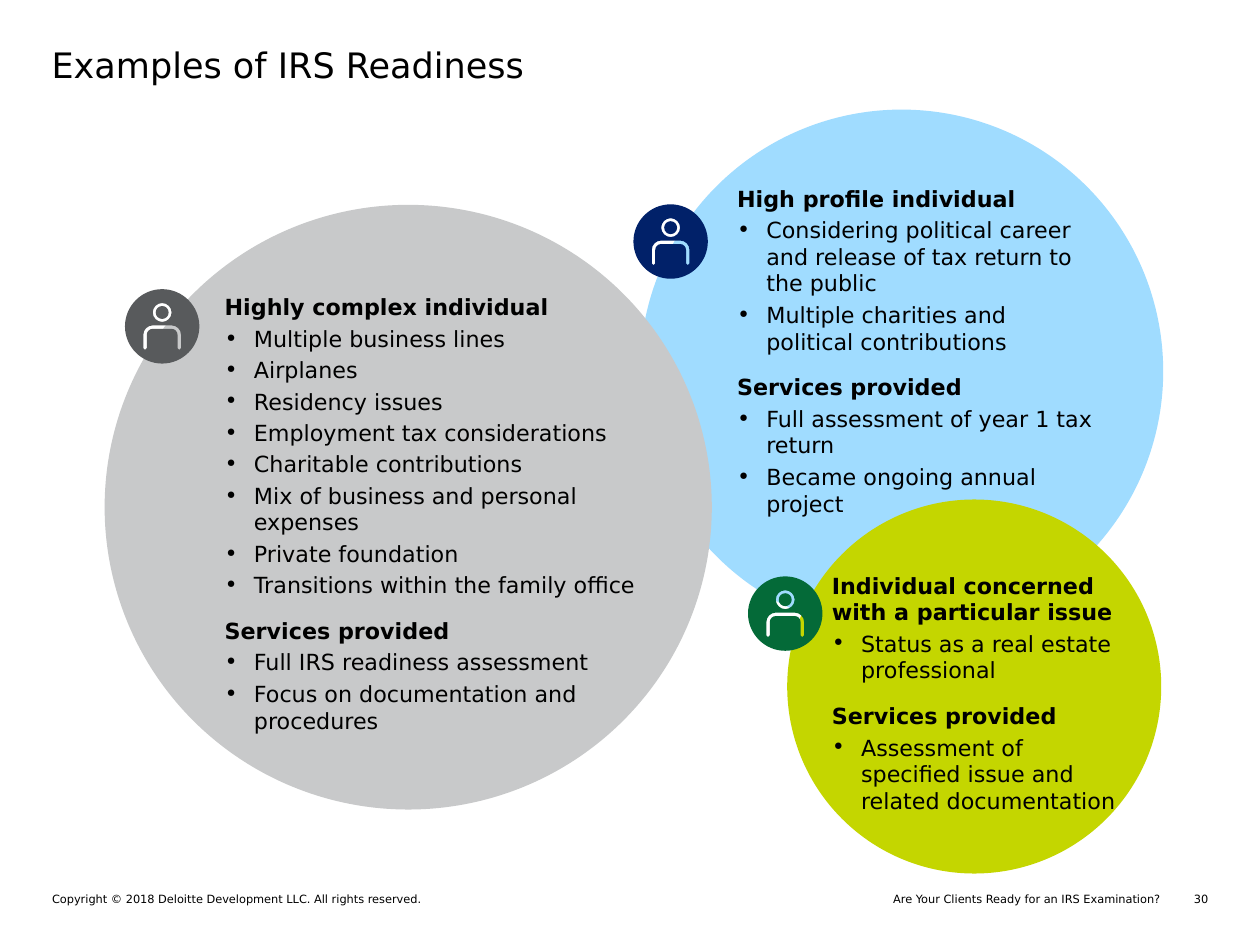
import pptx
import pptx.dml.color
import pptx.enum.shapes
import pptx.enum.text
import pptx.oxml.ns
import pptx.util
from lxml import etree
from pptx.util import Cm, Pt

FONT = "DejaVu Sans"
COLORS = {
    "text": "000000",
    "light blue": "A0DCFF",
    "navy": "012169",
    "lime": "C4D600",
    "green": "046A38",
    "light grey": "C8C9CA",
    "dark grey": "585A5C",
}
ICON_SIZE = 1.5
UNITS_PER_CM = 1000
ARC_PULL = 0.55  # how far a quarter arc's control points reach to its corner
SERVICES = "Services provided"

# Boxes are (left, top, width, height) in centimetres.
PROFILES = [
    {
        "circle": (12.9, 2.21, 10.55, 10.55), "fill": "light blue",
        "text": (14.86, 3.73, 7.29, 6.07),
        "icon": (12.77, 4.12), "icon fill": "navy",
        "sections": [
            ("High profile individual", [
                "Considering political career and release of tax return to the public",
                "Multiple charities and political contributions"]),
            (SERVICES, [
                "Full assessment of year 1 tax return",
                "Became ongoing annual project"]),
        ],
    },
    {
        "circle": (15.87, 10.07, 7.54, 7.54), "fill": "lime",
        "text": (16.77, 11.53, 5.75, 4.8),
        "icon": (15.08, 11.62), "icon fill": "green",
        "sections": [
            ("Individual concerned\nwith a particular issue", [
                "Status as a real estate professional"]),
            (SERVICES, [
                "Assessment of specified issue and related documentation"]),
        ],
    },
    {
        "circle": (2.11, 4.13, 12.24, 12.19), "fill": "light grey",
        "text": (4.53, 5.92, 8.38, 8.94),
        "icon": (2.52, 5.83), "icon fill": "dark grey",
        "sections": [
            ("Highly complex individual", [
                "Multiple business lines",
                "Airplanes",
                "Residency issues",
                "Employment tax considerations",
                "Charitable contributions",
                "Mix of business and personal expenses",
                "Private foundation",
                "Transitions within the family office"]),
            (SERVICES, [
                "Full IRS readiness assessment",
                "Focus on documentation and procedures"]),
        ],
    },
]


def color(name):
    return pptx.dml.color.RGBColor.from_string(COLORS[name])


def paint(shape, fill):
    shape.shadow.inherit = False
    shape.fill.solid()
    shape.fill.fore_color.rgb = color(fill)
    shape.line.fill.background()


def prepare_frame(frame):
    frame.margin_left = frame.margin_top = 0
    frame.margin_right = frame.margin_bottom = 0
    frame.vertical_anchor = pptx.enum.text.MSO_ANCHOR.TOP
    frame.word_wrap = True
    frame.auto_size = pptx.enum.text.MSO_AUTO_SIZE.NONE


def add_text_frame(slide, box):
    frame = slide.shapes.add_textbox(*map(Cm, box)).text_frame
    prepare_frame(frame)
    return frame


def add_run(paragraph, text, size, bold=False):
    run = paragraph.add_run()
    run.text = text
    run.font.name = FONT
    run.font.size = Pt(size)
    run.font.bold = bold
    run.font.color.rgb = color("text")


def set_bullet(paragraph):
    properties = paragraph._p.get_or_add_pPr()
    properties.set("marL", str(Cm(0.59)))
    properties.set("indent", str(-Cm(0.59)))
    for tag, name, value in [("a:buFont", "typeface", FONT), ("a:buChar", "char", "•")]:
        etree.SubElement(properties, pptx.oxml.ns.qn(tag)).set(name, value)


def add_sections(slide, box, sections):
    """Write bold headings, each followed by its bulleted list."""
    frame = add_text_frame(slide, box)
    for index, (heading, items) in enumerate(sections):
        if index == 0:
            paragraph = frame.paragraphs[0]
        else:
            paragraph = frame.add_paragraph()
            paragraph.space_before = Pt(10.9)
        for number, line in enumerate(heading.split("\n")):
            if number:
                paragraph.add_line_break()
            add_run(paragraph, line, 12.7, bold=True)
        for item in items:
            paragraph = frame.add_paragraph()
            set_bullet(paragraph)
            paragraph.space_before = Pt(2.7)
            add_run(paragraph, item, 12.7)


def circle_contour(x, y, radius):
    """Start point and four (corner, end) quarter arcs."""
    left, right, top, bottom = x - radius, x + radius, y - radius, y + radius
    return (left, y), [((left, top), (x, top)), ((right, top), (right, y)),
                       ((right, bottom), (x, bottom)), ((left, bottom), (left, y))]


def shoulders_contour(left, right, top, bottom, radius, stroke):
    """Start point and (corner, end) segments of an arch with rounded ends."""
    inner_left, inner_right, inner_top = left + stroke, right - stroke, top + stroke
    cap, tip = stroke / 2, bottom + stroke / 2
    return (left, bottom), [
        (None, (left, top + radius)),
        ((left, top), (left + radius, top)),
        (None, (right - radius, top)),
        ((right, top), (right, top + radius)),
        (None, (right, bottom)),
        ((right, tip), (right - cap, tip)),
        ((inner_right, tip), (inner_right, bottom)),
        (None, (inner_right, top + radius)),
        ((inner_right, inner_top), (right - radius, inner_top)),
        (None, (left + radius, inner_top)),
        ((inner_left, inner_top), (inner_left, top + radius)),
        (None, (inner_left, bottom)),
        ((inner_left, tip), (left + cap, tip)),
        ((left, tip), (left, bottom)),
    ]


def bend(line, start, corner, end):
    """Turn a straight path segment into a quarter arc around a corner."""
    line.tag = pptx.oxml.ns.qn("a:cubicBezTo")
    for position, anchor in enumerate((start, end)):
        control = etree.Element(pptx.oxml.ns.qn("a:pt"))
        for name, a, b in zip("xy", anchor, corner):
            control.set(name, str(round((a + (b - a) * ARC_PULL) * UNITS_PER_CM)))
        line.insert(position, control)


def add_person_icon(slide, left, top, fill):
    """Draw a disc with the outline of a person cut out of it."""
    middle = ICON_SIZE / 2
    contours = [
        circle_contour(middle, middle, middle),
        circle_contour(middle, 0.47, 0.19),
        circle_contour(middle, 0.47, 0.13),
        shoulders_contour(middle - 0.38, middle + 0.38, 0.73, 1.19, 0.19, 0.07),
    ]
    builder = slide.shapes.build_freeform(scale=Cm(1) / UNITS_PER_CM)
    segments = []
    for start, steps in contours:
        builder.move_to(*(value * UNITS_PER_CM for value in start))
        builder.add_line_segments(
            [(x * UNITS_PER_CM, y * UNITS_PER_CM) for _, (x, y) in steps], close=True)
        for corner, end in steps:
            segments.append((start, corner, end))
            start = end
    icon = builder.convert_to_shape(Cm(left), Cm(top))
    outline = icon._element.find(".//" + pptx.oxml.ns.qn("a:path"))
    outline.remove(outline[0])  # the builder's unused start point
    lines = outline.findall(pptx.oxml.ns.qn("a:lnTo"))
    for line, (start, corner, end) in zip(lines, segments):
        if corner:
            bend(line, start, corner, end)
    paint(icon, fill)


def add_profile(slide, profile):
    circle = slide.shapes.add_shape(
        pptx.enum.shapes.MSO_SHAPE.OVAL, *map(Cm, profile["circle"]))
    paint(circle, profile["fill"])
    add_sections(slide, profile["text"], profile["sections"])
    add_person_icon(slide, *profile["icon"], profile["icon fill"])


def add_title(slide, text, box):
    title = slide.shapes.title
    title.left, title.top, title.width, title.height = map(Cm, box)
    prepare_frame(title.text_frame)
    paragraph = title.text_frame.paragraphs[0]
    paragraph.alignment = pptx.enum.text.PP_ALIGN.LEFT
    add_run(paragraph, text, 20)


def add_footer(slide, top):
    left, right = pptx.enum.text.PP_ALIGN.LEFT, pptx.enum.text.PP_ALIGN.RIGHT
    for text, start, width, alignment in [
        ("Copyright © 2018 Deloitte Development LLC. All rights reserved.", 1.05, 11.15, left),
        ("Are Your Clients Ready for an IRS Examination?", 13.2, 10.2, right),
        ("30", 23.72, 0.64, right),
    ]:
        paragraph = add_text_frame(slide, (start, top, width, 0.56)).paragraphs[0]
        paragraph.alignment = alignment
        add_run(paragraph, text, 6.5)


def main():
    presentation = pptx.Presentation()
    presentation.slide_width, presentation.slide_height = Cm(25.4), Cm(19.05)
    slide = presentation.slides.add_slide(presentation.slide_layouts[5])
    add_title(slide, "Examples of IRS Readiness", (1.04, 0.88, 23.32, 3.05))
    for profile in PROFILES:
        add_profile(slide, profile)
    add_footer(slide, 17.98)
    presentation.save("out.pptx")


if __name__ == "__main__":
    main()
